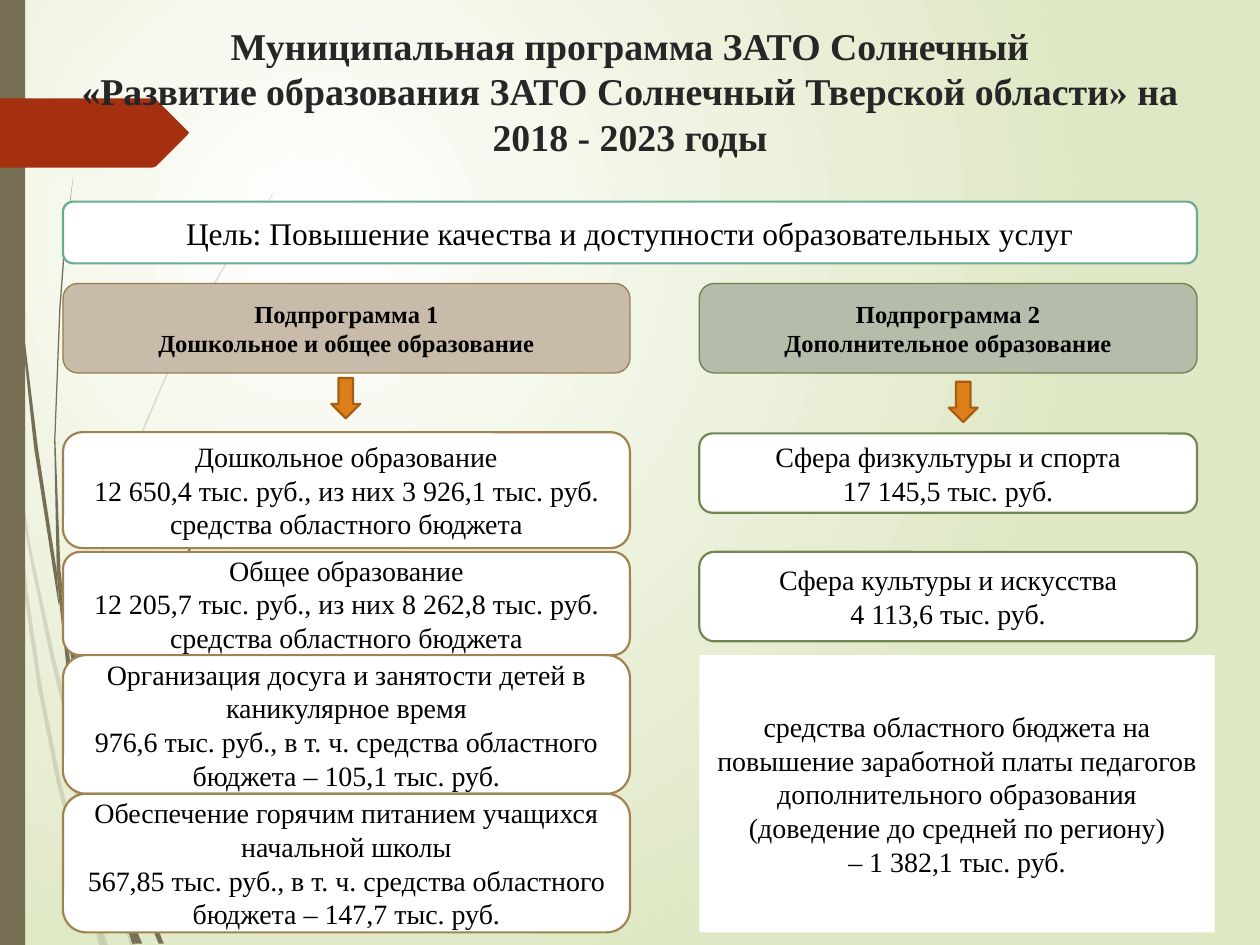
import pptx
import pptx.util
import pptx.dml.color
import pptx.enum.shapes
import pptx.enum.text
import pptx.oxml
import pptx.oxml.ns

Inches = pptx.util.Inches
RGBColor = pptx.dml.color.RGBColor
SHAPE = pptx.enum.shapes.MSO_SHAPE

FONT = "Times New Roman"
WHITE = RGBColor(0xFF, 0xFF, 0xFF)
BLACK = RGBColor(0, 0, 0)
TITLE_GREY = RGBColor(0x26, 0x26, 0x26)
PALE_GREEN = RGBColor(0xDF, 0xE8, 0xC4)
OLIVE = RGBColor(0x76, 0x6F, 0x54)
RED = RGBColor(0xA5, 0x30, 0x10)
TEAL = RGBColor(0x6A, 0xAC, 0x91)
BEIGE = RGBColor(0xC8, 0xBB, 0xAA)
BEIGE_LINE = RGBColor(0x98, 0x7D, 0x4D)
SAGE = RGBColor(0xB4, 0xBC, 0xAA)
SAGE_LINE = RGBColor(0x6D, 0x80, 0x4F)
BROWN = RGBColor(0x9F, 0x83, 0x51)
GREEN = RGBColor(0x72, 0x86, 0x53)
ORANGE = RGBColor(0xDE, 0x7E, 0x18)
ORANGE_LINE = RGBColor(0xA4, 0x5D, 0x12)

LEFT, LEFT_WIDTH = 0.5, 4.5
RIGHT, RIGHT_WIDTH = 5.55, 3.95

# Outlines of the grass blades, in hundredths of an inch
PALE_BLADES = [
    [(8, 350), (6, 322), (0, 282), (0, 299), (7, 344)],
    [(40, 522), (59, 599), (59, 586), (43, 520), (25, 437), (10, 345), (12, 376), (24, 444)],
    [(64, 607), (61, 596), (61, 610), (85, 694), (104, 751), (108, 751), (88, 692)],
    [(83, 751), (86, 751), (73, 711)],
    [(64, 683), (48, 619), (33, 544), (22, 469), (12, 376), (8, 350), (19, 470),
     (30, 546), (45, 621), (64, 693), (70, 714), (69, 707)],
    [(58, 599), (60, 646), (64, 683), (73, 711), (63, 646), (61, 610)],
    [(61, 584), (66, 522), (76, 462), (92, 402), (111, 349), (134, 295), (159, 245),
     (187, 198), (217, 154), (217, 153), (186, 197), (158, 244), (133, 294), (110, 348),
     (91, 401), (75, 461), (64, 521), (59, 584), (59, 586), (61, 596)],
    [(70, 714), (79, 751), (82, 751)],
    [(67, 692), (65, 683), (69, 707), (70, 714), (82, 751), (83, 751), (73, 711)],
]
DARK_BLADES = [
    [(5, 110), (14, 233), (27, 355), (46, 477), (47, 481), (45, 453), (30, 355),
     (15, 232), (6, 109), (3, 0), (2, 0), (3, 48)],
    [(73, 592), (88, 645), (88, 631), (77, 590), (62, 531), (50, 472), (53, 505), (62, 549)],
    [(94, 649), (91, 641), (91, 656), (109, 708), (126, 749), (130, 749), (113, 706)],
    [(91, 691), (81, 657), (69, 607), (60, 556), (53, 505), (47, 477), (56, 557),
     (66, 608), (77, 659), (92, 708), (97, 722), (96, 717)],
    [(50, 472), (48, 453), (44, 349), (48, 245), (52, 193), (58, 141), (51, 193),
     (47, 245), (43, 349), (45, 449), (49, 472)],
    [(110, 749), (113, 749), (100, 719)],
    [(47, 477), (53, 505), (50, 472), (49, 472), (45, 449), (45, 453)],
    [(91, 633), (95, 592), (103, 552), (116, 513), (131, 476), (149, 440), (169, 406),
     (191, 374), (216, 344), (215, 344), (191, 373), (168, 405), (148, 439), (129, 474),
     (114, 512), (101, 551), (92, 591), (88, 631), (91, 641)],
    [(97, 722), (105, 749), (108, 749)],
    [(88, 645), (90, 651), (91, 656), (91, 641), (88, 631)],
    [(96, 706), (91, 691), (96, 717), (97, 722), (108, 749), (110, 749), (100, 719)],
]
BANNER = [(149, 107), (124, 132), (121, 133), (0, 133), (0, 78), (121, 78),
          (124, 79), (149, 104), (150, 105)]


def paint(shape, fill, line=None, line_width=1.25):
    shape.shadow.inherit = False
    shape.fill.solid()
    shape.fill.fore_color.rgb = fill
    if line is None:
        shape.line.fill.background()
    else:
        shape.line.color.rgb = line
        shape.line.width = pptx.util.Pt(line_width)


def add_outline(slide, points, fill, opacity=None):
    builder = slide.shapes.build_freeform(*points[0], scale=Inches(0.01))
    builder.add_line_segments(points[1:], close=True)
    shape = builder.convert_to_shape()
    paint(shape, fill)
    if opacity is not None:
        color = next(shape._element.spPr.iter(pptx.oxml.ns.qn("a:srgbClr")))
        alpha = pptx.oxml.parse_xml(
            f'<a:alpha {pptx.oxml.ns.nsdecls("a")} val="{opacity * 1000}"/>')
        color.append(alpha)


def write_text(text_frame, lines, color=BLACK, **font_format):
    text_frame.word_wrap = True
    text_frame.vertical_anchor = pptx.enum.text.MSO_ANCHOR.MIDDLE
    text_frame.text = "\n".join(lines)
    for paragraph in text_frame.paragraphs:
        paragraph.alignment = pptx.enum.text.PP_ALIGN.CENTER
        for run in paragraph.runs:
            run.font.color.rgb = color
            for name, value in {"name": FONT, **font_format}.items():
                setattr(run.font, name, value)


def add_box(slide, kind, position, fill, line=None, line_width=1.25, lines=(), size=16, bold=False):
    shape = slide.shapes.add_shape(kind, *map(Inches, position))
    paint(shape, fill, line, line_width)
    if lines:
        write_text(shape.text_frame, lines, size=pptx.util.Pt(size), bold=bold)


def set_background(slide):
    fill = slide.background.fill
    fill.gradient()
    for stop, position, color in zip(fill.gradient_stops, (0, 1), (WHITE, PALE_GREEN)):
        stop.position = position
        stop.color.rgb = color
    linear = next(slide._element.iter(pptx.oxml.ns.qn("a:lin")))
    radial = pptx.oxml.parse_xml(
        f'<a:path {pptx.oxml.ns.nsdecls("a")} path="circle">'
        '<a:fillToRect l="50000" t="50000" r="100000" b="100000"/></a:path>')
    linear.getparent().replace(linear, radial)


def add_decoration(slide):
    for blade in PALE_BLADES:
        add_outline(slide, blade, OLIVE, opacity=20)
    for blade in DARK_BLADES:
        add_outline(slide, blade, OLIVE)
    add_box(slide, SHAPE.RECTANGLE, (0, 0, 0.2, 7.5), OLIVE)
    add_outline(slide, BANNER, RED)


def add_title(slide):
    title = slide.shapes.title
    places = {"left": 0.5, "top": 0.13, "width": 9, "height": 1.18}
    for name, value in places.items():
        setattr(title, name, Inches(value))
    write_text(title.text_frame, [
        "Муниципальная программа ЗАТО Солнечный\v"
        "«Развитие образования ЗАТО Солнечный Тверской области» на 2018 - 2023 годы",
    ], TITLE_GREY, size=pptx.util.Pt(21.6), bold=True)
    # Bring the title in front of the decoration
    slide.shapes._spTree.append(title._element)


def main():
    presentation = pptx.Presentation()
    presentation.slide_width = Inches(10)
    presentation.slide_height = Inches(7.5)
    slide = presentation.slides.add_slide(presentation.slide_layouts[5])
    set_background(slide)
    add_decoration(slide)
    add_title(slide)

    # Goal and subprogramme headings
    heading = SHAPE.FLOWCHART_ALTERNATE_PROCESS
    add_box(slide, heading, (LEFT, 1.6, 9, 0.49), WHITE, TEAL, size=18,
            lines=["Цель: Повышение качества и доступности образовательных услуг"])
    for left, width, fill, line, lines in [
        (LEFT, LEFT_WIDTH, BEIGE, BEIGE_LINE, ["Подпрограмма 1", "Дошкольное и общее образование"]),
        (RIGHT, RIGHT_WIDTH, SAGE, SAGE_LINE, ["Подпрограмма 2", "Дополнительное образование"]),
    ]:
        add_box(slide, heading, (left, 2.25, width, 0.71), fill, line, 0.75, lines, 14, True)

    # Spending items
    left_column = (LEFT, LEFT_WIDTH, BROWN)
    right_column = (RIGHT, RIGHT_WIDTH, GREEN)
    for (left, width, line), top, height, lines in [
        (left_column, 3.43, 0.92, ["Дошкольное образование",
         "12 650,4 тыс. руб., из них 3 926,1 тыс. руб. средства областного бюджета"]),
        (left_column, 4.38, 0.82, ["Общее образование",
         "12 205,7 тыс. руб., из них 8 262,8 тыс. руб. средства областного бюджета"]),
        (left_column, 5.2, 1.1, ["Организация досуга и занятости детей в каникулярное время",
         "976,6 тыс. руб., в т. ч. средства областного бюджета – 105,1 тыс. руб."]),
        (left_column, 6.3, 1.1, ["Обеспечение горячим питанием учащихся начальной школы",
         "567,85 тыс. руб., в т. ч. средства областного бюджета – 147,7 тыс. руб."]),
        (right_column, 3.44, 0.63, ["Сфера физкультуры и спорта", "17 145,5 тыс. руб."]),
        (right_column, 4.38, 0.71, ["Сфера культуры и искусства", "4 113,6 тыс. руб."]),
    ]:
        add_box(slide, SHAPE.ROUNDED_RECTANGLE, (left, top, width, height), WHITE, line, lines=lines)

    # Arrows from headings to items
    for left, top in [(2.63, 3), (7.53, 3.03)]:
        add_box(slide, SHAPE.DOWN_ARROW, (left, top, 0.23, 0.32), ORANGE, ORANGE_LINE)

    # Regional budget note
    add_box(slide, SHAPE.RECTANGLE, (RIGHT, 5.2, 4.09, 2.2), WHITE, lines=[
        "средства областного бюджета на повышение заработной платы педагогов "
        "дополнительного образования (доведение до средней по региону)",
        "– 1 382,1 тыс. руб."])

    presentation.save("out.pptx")


if __name__ == "__main__":
    main()
